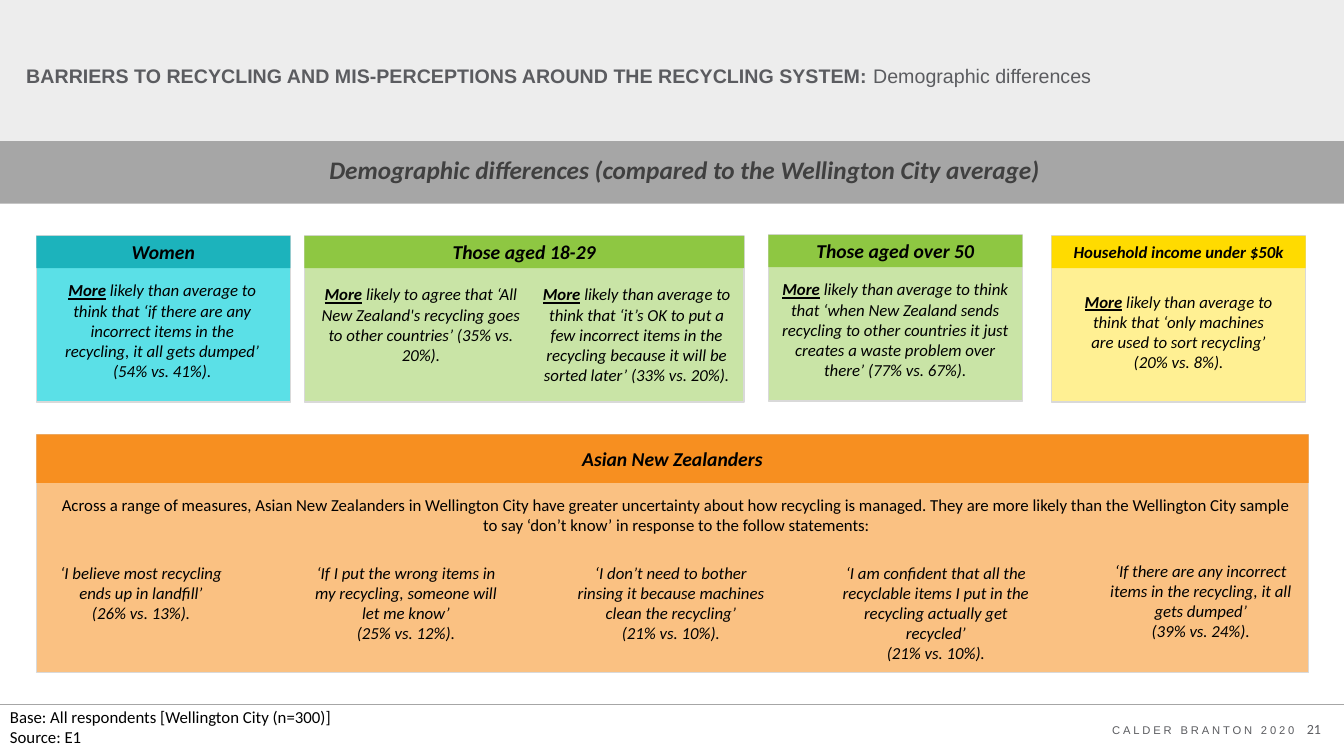
import pptx
import pptx.util
import pptx.dml.color
import pptx.enum.shapes
import pptx.enum.text
import lxml.etree

Inch, Pt = pptx.util.Inches, pptx.util.Pt
RGB = pptx.dml.color.RGBColor
ALIGN = pptx.enum.text.PP_ALIGN
ANCHOR = pptx.enum.text.MSO_ANCHOR
FIT = pptx.enum.text.MSO_AUTO_SIZE
RECT = pptx.enum.shapes.MSO_SHAPE.RECTANGLE
LINE = pptx.enum.shapes.MSO_CONNECTOR.STRAIGHT

BLACK, SLATE, DARK = RGB(0, 0, 0), RGB(0x5B, 0x5C, 0x60), RGB(0x40, 0x40, 0x40)
PALE, GREY, EDGE = RGB(0xED, 0xED, 0xED), RGB(0xA6, 0xA6, 0xA6), RGB(0xD9, 0xD9, 0xD9)
TEAL, AQUA = RGB(0x1C, 0xB3, 0xBC), RGB(0x5B, 0xE0, 0xE7)
GREEN, LIME = RGB(0x8E, 0xC7, 0x42), RGB(0xC9, 0xE4, 0xA6)
GOLD, LEMON = RGB(0xFF, 0xDB, 0), RGB(0xFF, 0xF0, 0x93)
ORANGE, PEACH = RGB(0xF7, 0x8F, 0x20), RGB(0xFA, 0xC1, 0x82)

# Content
TITLE = [("BARRIERS TO RECYCLING AND MIS-PERCEPTIONS AROUND THE RECYCLING SYSTEM: ", "b"),
         ("Demographic differences", "")]
BANNER = "Demographic differences (compared to the Wellington City average)"
# Card: head, head size, head colour, body colour, left, top, width, notes
# Note: left inset, top inset, width, lines that follow "More"
CARDS = [
    ("Women", 14, TEAL, AQUA, 0.36, 2.34, 2.52, [
        (0.18, 0.39, 2.14, [" likely than average to think that ‘if there are any incorrect items "
                            "in the recycling, it all gets dumped’ (54% vs. 41%)."])]),
    ("Those aged 18-29", 14, GREEN, LIME, 3.02, 2.34, 4.36, [
        (0.07, 0.43, 2.17, [" likely to agree that ‘All New Zealand's recycling goes to other "
                            "countries’ (35% vs. 20%)."]),
        (2.25, 0.43, 2.09, [" likely than average to think that ‘it’s OK to put a few incorrect "
                            "items in the recycling because it will be sorted later’ (33% vs. 20%)."])]),
    ("Those aged over 50", 14, GREEN, LIME, 7.62, 2.33, 2.52, [
        (0, 0.39, 2.52, [" likely than average to think that ‘when New Zealand sends recycling to "
                         "other countries it just creates a waste problem over there’ (77% vs. 67%)."])]),
    ("Household income under $50k", 12, GOLD, LEMON, 10.43, 2.34, 2.52, [
        (0.19, 0.5, 2.14, [" likely than average to think that ‘only machines are used to sort "
                           "recycling’", "(20% vs. 8%)."])]),
]
ASIAN = "Asian New Zealanders"
INTRO = ("Across a range of measures, Asian New Zealanders in Wellington City have greater uncertainty "
         "about how recycling is managed. They are more likely than the Wellington City sample to say "
         "‘don’t know’ in response to the follow statements:")
# Quote: top, words, score
QUOTES = [
    (5.53, "‘I believe most recycling ends up in landfill’", "(26% vs. 13%)."),
    (5.53, "‘If I put the wrong items in my recycling, someone will let me know’", "(25% vs. 12%)."),
    (5.53, "‘I don’t need to bother rinsing it because machines clean the recycling’", "(21% vs. 10%)."),
    (5.53, "‘I am confident that all the recyclable items I put in the recycling actually get recycled’",
     "(21% vs. 10%)."),
    (5.51, "‘If there are any incorrect items in the recycling, it all gets dumped’", "(39% vs. 24%)."),
]
BASE = ["Base: All respondents [Wellington City (n=300)]", "Source: E1"]
CREDIT, PAGE = "CALDER BRANTON 2020", "21"

# Layout
WIDE, HIGH = 13.33, 7.5
EDGE_X, SPAN = 0.36, 12.62
BODY_H, HEAD_H = 1.65, 0.32
STEP = (10.87 - EDGE_X) / (len(QUOTES) - 1)

deck = pptx.Presentation()
deck.slide_width, deck.slide_height = Inch(WIDE), Inch(HIGH)
slide = deck.slides.add_slide(deck.slide_layouts[5])


def fill_text(frame, paras, size, color=BLACK, align=ALIGN.CENTER, face="Calibri"):
    """Each paragraph is a list of (words, style); style letters are b, i, u."""
    frame.word_wrap = True
    for n, runs in enumerate(paras):
        para = frame.add_paragraph() if n else frame.paragraphs[0]
        para.alignment = align
        for words, style in runs:
            run = para.add_run()
            run.text = words
            font = run.font
            font.name, font.size, font.color.rgb = face, Pt(size), color
            font.bold, font.italic, font.underline = "b" in style, "i" in style, "u" in style


def add_text(home, x, y, w, h, paras, size, **look):
    box = home.add_textbox(Inch(x), Inch(y), Inch(w), Inch(h))
    fill_text(box.text_frame, paras, size, **look)
    return box


def add_rect(home, x, y, w, h, fill, edge=None):
    rect = home.add_shape(RECT, Inch(x), Inch(y), Inch(w), Inch(h))
    rect.shadow.inherit = False
    rect.fill.solid()
    rect.fill.fore_color.rgb = fill
    if edge:
        rect.line.color.rgb, rect.line.width = edge, Pt(1)
    else:
        rect.line.fill.background()
    return rect


def add_panel(home, x, y, w, h, head_h, head, size, dark, light):
    add_rect(home, x, y, w, h, light, EDGE)
    add_rect(home, x, y, w, head_h, dark)
    text_h = size * 0.017 + 0.1
    add_text(home, x, y + (head_h - text_h) / 2, w, text_h, [[(head, "bi")]], size)


# Title on its pale band
title = slide.shapes.title
title.left, title.top, title.width, title.height = Inch(0.16), Inch(-0.02), Inch(10.95), Inch(1.57)
fill_text(title.text_frame, [TITLE], 14, SLATE, ALIGN.LEFT, "Arial")
title.text_frame.auto_size = FIT.NONE
title.text_frame.vertical_anchor = ANCHOR.MIDDLE
title.text_frame.paragraphs[0].line_spacing = 0.9
band = add_rect(slide.shapes, 0, 0, WIDE, 1.4, PALE)
title.element.addprevious(band.element)

# Banner
add_rect(slide.shapes, 0, 1.4, WIDE, 0.62, GREY)
add_text(slide.shapes, 1.9, 1.48, 9.78, 0.4, [[(BANNER, "bi")]], 18, color=DARK)

# Cards
for head, size, dark, light, x, y, w, notes in CARDS:
    home = slide.shapes.add_group_shape().shapes
    add_panel(home, x, y, w, BODY_H, HEAD_H, head, size, dark, light)
    for dx, dy, wide, lines in notes:
        paras = [[(line, "i")] for line in lines]
        paras[0].insert(0, ("More", "biu"))
        add_text(home, x + dx, y + dy, wide, 1.11, paras, 12)

# Wide panel with quotes
add_panel(slide.shapes, EDGE_X, 4.31, SPAN, 2.36, 0.48, ASIAN, 14, ORANGE, PEACH)
add_text(slide.shapes, 0.44, 4.86, 12.54, 0.5, [[(INTRO, "")]], 12)
for n, (top, words, score) in enumerate(QUOTES):
    add_text(slide.shapes, EDGE_X + n * STEP, top, 2.08, 0.91, [[(words, "i")], [(score, "i")]], 12)

# Footer
rule = slide.shapes.add_connector(LINE, 0, Inch(6.99), Inch(WIDE), Inch(6.99))
rule.line.color.rgb, rule.line.width = GREY, Pt(0.5)
lxml.etree.SubElement(rule.element.spPr, pptx.oxml.ns.qn("a:effectLst"))
add_text(slide.shapes, 0, 6.96, 6.93, 0.5, [[(line, "")] for line in BASE], 12, align=ALIGN.LEFT)
credit = add_text(slide.shapes, 10.7, 7.05, 2.24, 0.39, [[(CREDIT, "")]], 8,
                  color=SLATE, align=ALIGN.RIGHT, face="Arial")
credit.text_frame.vertical_anchor = ANCHOR.MIDDLE
credit.text_frame.paragraphs[0].runs[0].font._element.set("spc", "200")
add_text(slide.shapes, 12.74, 7.1, 0.46, 0.27, [[(PAGE, "")]], 10, color=SLATE, align=ALIGN.RIGHT)

deck.save("out.pptx")
